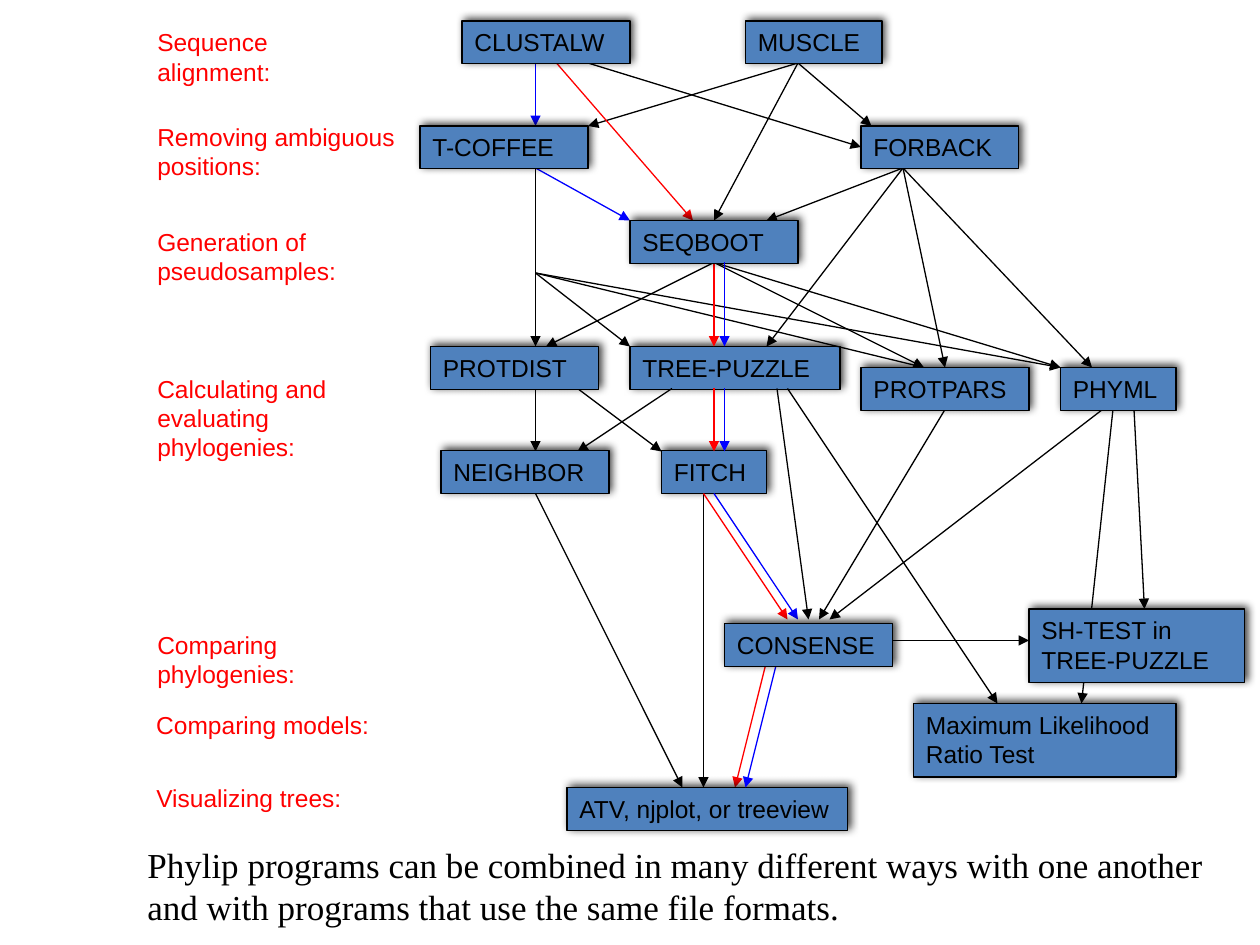
import dataclasses

import pptx
import pptx.dml.color
import pptx.enum.dml
import pptx.enum.shapes
import pptx.enum.text
import pptx.oxml
import pptx.oxml.ns
import pptx.util

Cm, Pt = pptx.util.Cm, pptx.util.Pt
RGBColor = pptx.dml.color.RGBColor

BLACK = RGBColor(0x00, 0x00, 0x00)
RED = RGBColor(0xFF, 0x00, 0x00)
BLUE = RGBColor(0x00, 0x00, 0xFF)
STEEL = RGBColor(0x4F, 0x81, 0xBD)

GRID = 2.54 / 12  # one grid step in centimetres
LINE_WIDTH = Pt(0.75)
ONE_LINE = 4.08  # box height in grid steps
TWO_LINES = 7

SHADOW = (
    f'<a:effectLst {pptx.oxml.ns.nsdecls("a")}>'
    '<a:outerShdw blurRad="63500" dist="25400" dir="18900000" rotWithShape="0">'
    '<a:srgbClr val="000000"><a:alpha val="75000"/></a:srgbClr>'
    '</a:outerShdw></a:effectLst>'
)
NO_EFFECT = f'<a:effectLst {pptx.oxml.ns.nsdecls("a")}/>'
ARROWHEAD = f'<a:tailEnd {pptx.oxml.ns.nsdecls("a")} type="triangle"/>'


# All positions and sizes are in grid steps
@dataclasses.dataclass
class Program:
    name: str
    left: float
    top: float
    width: float
    height: float = ONE_LINE


@dataclasses.dataclass
class Label:
    text: str
    left: float
    top: float
    width: float
    height: float


@dataclasses.dataclass
class Flow:
    start: tuple[float, float]
    end: tuple[float, float]
    color: RGBColor = BLACK


LABELS = [
    Label("Sequence alignment:", 13.8, 2, 19, 6.8),
    Label("Removing ambiguous positions:", 13.8, 11, 26, 6.8),
    Label("Generation of pseudosamples:", 13.8, 21, 24, 6.8),
    Label("Calculating and evaluating phylogenies:", 13.8, 35, 22, 9.6),
    Label("Comparing phylogenies:", 13.8, 59.4, 22, 6.8),
    Label("Comparing models:", 13.7, 67, 24, 4),
    Label("Visualizing trees:", 13.7, 74, 21, 4),
]

BACK_PROGRAMS = [
    Program("FITCH", 63, 42.9, 10),
    Program("TREE-PUZZLE", 60, 33, 20),
]

FLOWS = [
    # From the alignment programs
    Flow((51, 6), (51, 12), BLUE),
    Flow((76, 6), (56, 12)),
    Flow((56, 6), (82, 14)),
    Flow((76, 6), (83, 12)),
    Flow((53, 6), (66, 21), RED),
    Flow((76, 6), (68, 21)),
    # From T-COFFEE
    Flow((51, 16), (51, 33)),
    Flow((51, 16), (60, 21), BLUE),
    Flow((51, 26), (60, 33)),
    Flow((51, 26), (88, 35)),
    Flow((51, 26), (101, 35)),
    # From FORBACK
    Flow((86, 16), (73, 21)),
    Flow((86, 16), (90, 35)),
    Flow((86, 16), (104, 35)),
    Flow((86, 16), (73, 33)),
    # From SEQBOOT
    Flow((68, 25), (52, 33)),
    Flow((68, 25), (68, 33), RED),
    Flow((68, 25), (88, 35)),
    Flow((68, 25), (101, 35)),
    # From the phylogeny programs
    Flow((55, 37), (63, 43)),
    Flow((64, 37), (55, 43)),
    Flow((51, 37), (51, 43)),
    Flow((68, 37), (68, 43), RED),
    Flow((51, 47), (65, 75)),
    Flow((67, 47), (67, 75)),
    Flow((67, 47), (75, 59), RED),
    Flow((105, 39), (79, 59)),
    Flow((90, 39), (78, 59)),
    Flow((74, 37), (77, 59)),
    Flow((106, 39), (103, 67)),
    Flow((108, 39), (109, 58)),
    Flow((75, 37), (95, 67)),
    # From CONSENSE
    Flow((73, 63), (70, 75), RED),
]

FRONT_PROGRAMS = [
    Program("ATV, njplot, or treeview", 54, 75, 26.7),
    Program("Maximum Likelihood Ratio Test", 87, 67, 25, TWO_LINES),
    Program("SH-TEST in TREE-PUZZLE", 98, 58, 20.5, TWO_LINES),
    Program("NEIGHBOR", 42, 42.9, 16),
    Program("PROTPARS", 82, 35, 16),
    Program("PHYML", 101, 35, 11),
    Program("PROTDIST", 41, 33, 16),
    Program("T-COFFEE", 40, 12, 16),
    Program("SEQBOOT", 60, 21, 16),
    Program("FORBACK", 82, 12, 15),
    Program("CLUSTALW", 44, 2, 16),
    Program("MUSCLE", 71, 2, 13),
]

FRONT_FLOWS = [
    Flow((85, 61), (98, 61)),
    Flow((69, 25), (69, 33), BLUE),
    Flow((69, 37), (69, 43), BLUE),
    Flow((68, 47), (76, 59), BLUE),
    Flow((74, 63), (71, 75), BLUE),
]

CONSENSE = Program("CONSENSE", 69, 59.4, 16)


def steps(*values: float) -> list:
    return [Cm(value * GRID) for value in values]


def write(box, text: str, color: RGBColor, size: float = 14, font: str = "Arial") -> None:
    frame = box.text_frame
    frame.word_wrap = True
    frame.vertical_anchor = pptx.enum.text.MSO_ANCHOR.TOP
    frame.text = text
    para = frame.paragraphs[0]
    para.alignment = pptx.enum.text.PP_ALIGN.LEFT
    for span in para.runs:
        span.font.name = font
        span.font.size = Pt(size)
        span.font.color.rgb = color


def draw_label(page, label: Label) -> None:
    box = page.shapes.add_textbox(*steps(label.left, label.top, label.width, label.height))
    write(box, label.text, RED)


def draw_program(page, program: Program) -> None:
    box = page.shapes.add_shape(
        pptx.enum.shapes.MSO_SHAPE.RECTANGLE,
        *steps(program.left, program.top, program.width, program.height))
    box.fill.solid()
    box.fill.fore_color.rgb = STEEL
    box.line.color.rgb = BLACK
    box.line.width = LINE_WIDTH
    box.element.spPr.append(pptx.oxml.parse_xml(SHADOW))
    write(box, program.name, BLACK)


def draw_flow(page, flow: Flow) -> None:
    arrow = page.shapes.add_connector(
        pptx.enum.shapes.MSO_CONNECTOR.STRAIGHT, *steps(*flow.start, *flow.end))
    arrow.line.color.rgb = flow.color
    arrow.line.width = LINE_WIDTH
    arrow.line._get_or_add_ln().append(pptx.oxml.parse_xml(ARROWHEAD))
    arrow._element.spPr.append(pptx.oxml.parse_xml(NO_EFFECT))


def main() -> None:
    deck = pptx.Presentation()
    deck.slide_width, deck.slide_height = Cm(25.4), Cm(19.05)
    page = deck.slides.add_slide(deck.slide_layouts[6])

    # Steps of the analysis
    for label in LABELS:
        draw_label(page, label)

    # Programs and the flows between them, from back to front
    for program in BACK_PROGRAMS:
        draw_program(page, program)
    for flow in FLOWS:
        draw_flow(page, flow)
    for program in FRONT_PROGRAMS:
        draw_program(page, program)
    for flow in FRONT_FLOWS:
        draw_flow(page, flow)
    draw_program(page, CONSENSE)

    # Caption
    caption = page.shapes.add_textbox(Cm(2.72), Cm(16.87), Cm(22.68), Cm(1.96))
    write(caption, "Phylip programs can be combined in many different ways with one another "
          "and with programs that use the same file formats.", BLACK, 20, "Times New Roman")

    deck.save("out.pptx")


if __name__ == "__main__":
    main()
